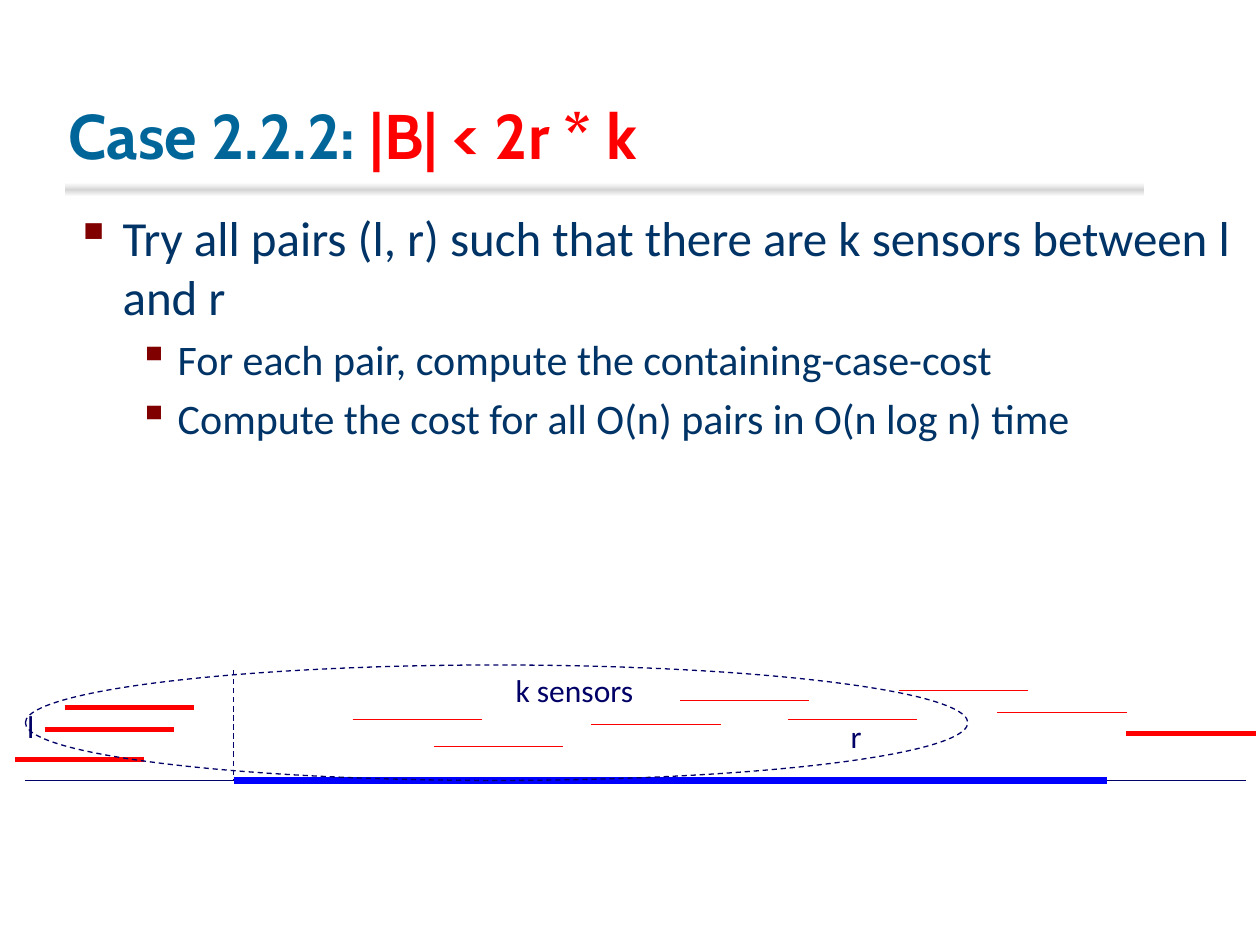
from lxml import etree
from pptx import Presentation
from pptx.dml.color import RGBColor
from pptx.enum.dml import MSO_LINE_DASH_STYLE as DASH
from pptx.enum.shapes import MSO_CONNECTOR, MSO_SHAPE
from pptx.enum.text import MSO_ANCHOR
from pptx.oxml.ns import qn
from pptx.util import Pt

NAVY, RED, BLUE = "000066", "FF0000", "0000FF"
TEAL, BODY, BULLET = "006699", "003366", "800000"


def rgb(value):
    return RGBColor.from_string(value)


def add_run(p, text, size, color, font="Calibri", bold=False):
    r = p.add_run()
    r.text = text
    r.font.name, r.font.size, r.font.bold = font, Pt(size), bold
    r.font.color.rgb = rgb(color)


def add_text(s, x, y, w, h, wrap=True):
    tf = s.shapes.add_textbox(Pt(x), Pt(y), Pt(w), Pt(h)).text_frame
    tf.word_wrap = wrap
    return tf


def add_line(s, x1, y1, x2, y2, color, width=0.75, dash=None):
    c = s.shapes.add_connector(MSO_CONNECTOR.STRAIGHT, Pt(x1), Pt(y1), Pt(x2), Pt(y2))
    c.line.color.rgb, c.line.width = rgb(color), Pt(width)
    if dash:
        c.line.dash_style = dash
    etree.SubElement(c._element.spPr, qn("a:effectLst"))


def set_bullet(p, left, hanging):
    pPr = p._p.get_or_add_pPr()
    pPr.set("marL", str(Pt(left)))
    pPr.set("indent", str(-Pt(hanging)))
    color = etree.SubElement(pPr, qn("a:buClr"))
    etree.SubElement(color, qn("a:srgbClr"), val=BULLET)
    etree.SubElement(pPr, qn("a:buChar"), char="▪")


def add_rule(s, x, y, w, h):
    """Soft grey bar that fades out above and below."""
    sp = s.shapes.add_shape(MSO_SHAPE.RECTANGLE, Pt(x), Pt(y), Pt(w), Pt(h))
    sp.shadow.inherit = False
    sp.line.fill.background()
    sp.fill.gradient()
    sp.fill.gradient_angle = 90
    stops = sp._element.spPr.find(qn("a:gradFill")).find(qn("a:gsLst"))
    for stop in list(stops):
        stops.remove(stop)
    for pos, color in ((0, "FFFFFF"), (50, "D4D4D4"), (100, "FFFFFF")):
        stop = etree.SubElement(stops, qn("a:gs"), pos=str(pos * 1000))
        etree.SubElement(stop, qn("a:srgbClr"), val=color)


def add_title(s, x, y, w, h):
    tf = add_text(s, x, y, w, h)
    tf.vertical_anchor = MSO_ANCHOR.BOTTOM
    p = tf.paragraphs[0]
    add_run(p, "Case 2.2.2: ", 36, TEAL, "Cabin", True)
    add_run(p, "|B| < 2r * k", 36, RED, "Cabin", True)


def add_body(s, x, y, w, h):
    tf = add_text(s, x, y, w, h)
    items = [
        (0, "Try all pairs (l, r) such that there are k sensors between l and r"),
        (1, "For each pair, compute the containing-case-cost"),
        (1, "Compute the cost for all O(n) pairs in O(n log n) time"),
    ]
    levels = [(28, 27, 27), (24, 58.5, 22.5)]  # size, left margin, hanging indent
    for i, (level, text) in enumerate(items):
        p = tf.add_paragraph() if i else tf.paragraphs[0]
        size, left, hanging = levels[level]
        p.level = level
        p.space_before = Pt(size * 0.2)
        set_bullet(p, left, hanging)
        add_run(p, text, size, BODY)


def add_diagram(s, x, y, w, h):
    """Sensors above a line whose thick part is the barrier."""
    base = y + h
    barrier_left, barrier_right = x + 119, x + 618

    # Line and barrier
    add_line(s, x, base, x + w, base, NAVY)
    add_line(s, barrier_left, base, barrier_right, base, BLUE, 4.5)

    # Sensors: left, top, line width
    reach = 74
    sensors = [
        (22.5, 24.5, 3), (11, 37, 3), (-6, 54, 3),
        (323.5, 34, 0.75), (374, 20.5, 0.75), (187, 31, 0.75),
        (233.5, 46.5, 0.75), (435.5, 31, 0.75), (499, 14.5, 0.75),
        (555.5, 27, 0.75), (629, 39, 3),
    ]
    for left, top, width in sensors:
        add_line(s, x + left, y + top, x + left + reach, y + top, RED, width)

    # Left end of the barrier
    add_line(s, barrier_left, y + 3, barrier_left, base, NAVY, dash=DASH.DASH)

    # Group of k sensors
    sp = s.shapes.add_shape(MSO_SHAPE.OVAL, Pt(x), Pt(y), Pt(538.5), Pt(h))
    sp.shadow.inherit = False
    sp.fill.background()
    sp.line.color.rgb, sp.line.width = rgb(NAVY), Pt(0.75)
    sp.line.dash_style = DASH.DASH

    # Labels
    labels = [("l", -6, 20.5, 19), ("r", 464.5, 26, 22), ("k sensors", 273, 0, 90)]
    for text, left, top, width in labels:
        tf = add_text(s, x + left, y + top, width, 29, wrap=False)
        add_run(tf.paragraphs[0], text, 18, NAVY)


def main():
    prs = Presentation()
    prs.slide_width, prs.slide_height = Pt(720), Pt(540)
    s = prs.slides.add_slide(prs.slide_layouts[6])
    add_rule(s, 37, 104.5, 617, 8)
    add_title(s, 32, 12, 612, 90)
    add_body(s, 36, 115, 675.5, 263)
    add_diagram(s, 14.5, 380, 697.5, 66)
    prs.save("out.pptx")


if __name__ == "__main__":
    main()
